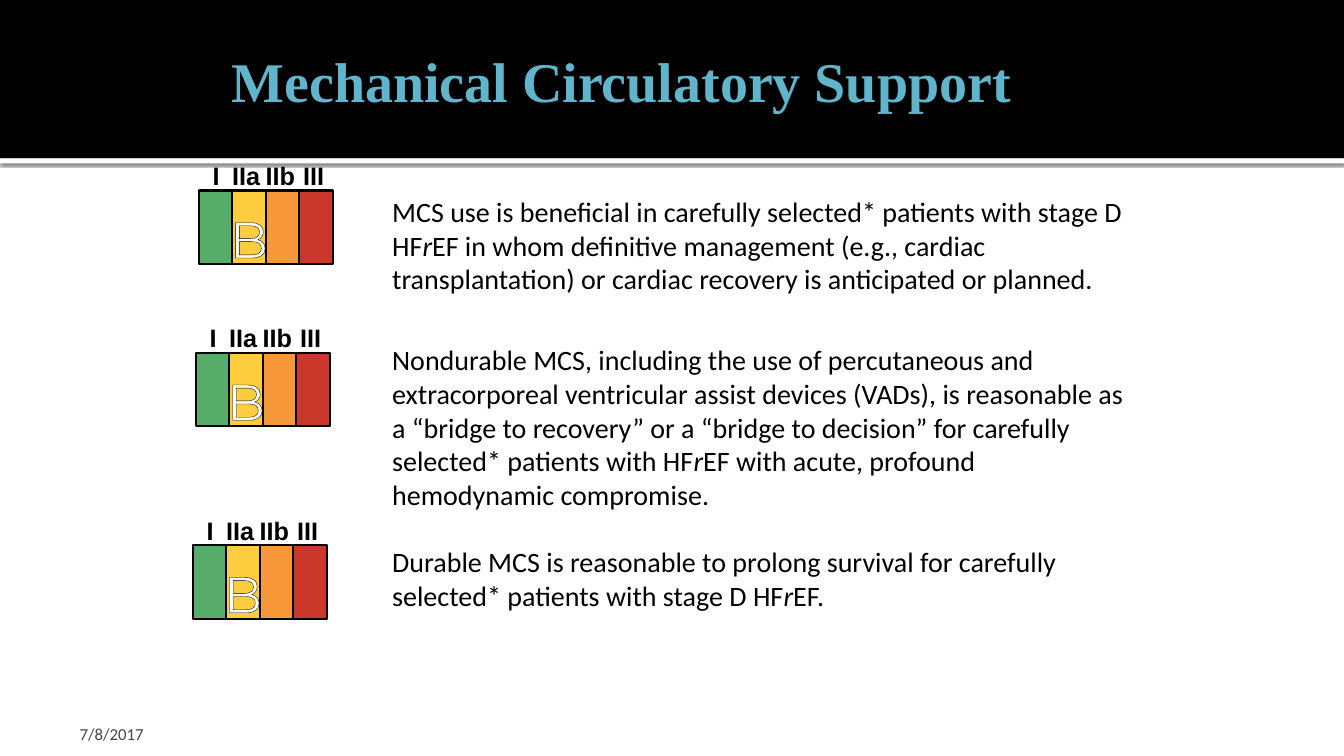
from dataclasses import dataclass

from lxml import etree
from pptx import Presentation
from pptx.dml.color import RGBColor
from pptx.enum.shapes import MSO_SHAPE
from pptx.enum.text import MSO_ANCHOR, PP_ALIGN
from pptx.oxml.ns import qn
from pptx.util import Inches, Pt

RECTANGLE = MSO_SHAPE.RECTANGLE
TOP, MIDDLE, BOTTOM = MSO_ANCHOR.TOP, MSO_ANCHOR.MIDDLE, MSO_ANCHOR.BOTTOM
LEFT, CENTER = PP_ALIGN.LEFT, PP_ALIGN.CENTER


@dataclass(frozen=True)
class Theme:
    """Colours, fonts and type sizes of the slide."""
    black: str = "000000"
    white: str = "FFFFFF"
    title: str = "60B5CC"
    date: str = "454545"
    title_font: str = "Times New Roman"
    body_font: str = "Calibri"
    label_font: str = "Arial"
    level_font: str = "Montserrat"
    title_size: int = 40
    body_size: int = 20
    date_size: int = 12
    label_size: int = 18
    level_size: int = 36


THEME = Theme()
CLASSES = [("I", "57AC69", 0.14), ("IIa", "FDCC3F", 0),
           ("IIb", "F7983A", 0), ("III", "C9382A", 0.04)]
BADGES = [(1.97, 1.59), (1.94, 3.2), (1.91, 5.11)]
RECOMMENDATIONS = [
    ("MCS use is beneficial in carefully selected* patients with stage D HF_r_EF in whom "
     "definitive management (e.g., cardiac transplantation) or cardiac recovery is "
     "anticipated or planned.", 0),
    ("Nondurable MCS, including the use of percutaneous and extracorporeal ventricular "
     "assist devices (VADs), is reasonable as a “bridge to recovery” or a “bridge to "
     "decision” for carefully selected* patients with HF_r_EF with acute, profound "
     "hemodynamic compromise.", 34),
    ("Durable MCS is reasonable to prolong survival for carefully selected* patients "
     "with stage D HF_r_EF.", 24),
]


def add_effects(properties, shadow):
    """Add a downward shadow to shape properties."""
    effects = etree.SubElement(properties, qn("a:effectLst"))
    outer = etree.SubElement(effects, qn("a:outerShdw"), blurRad=str(Pt(2.5)),
                             dist=str(Pt(0.8)), dir="5400000", rotWithShape="0")
    color = etree.SubElement(outer, qn("a:srgbClr"), val=shadow)
    etree.SubElement(color, qn("a:alpha"), val="60000")


def outline_text(run, color, width):
    """Draw a line around the letters of a run."""
    properties = run.font._element
    line = etree.Element(qn("a:ln"), w=str(Pt(width)))
    fill = etree.SubElement(line, qn("a:solidFill"))
    etree.SubElement(fill, qn("a:srgbClr"), val=color)
    properties.insert(0, line)


def add_rectangle(shapes, box, fill, line=None, shadow=None):
    """Add a filled rectangle in a box of inches."""
    shape = shapes.add_shape(RECTANGLE, *map(Inches, box))
    shape.fill.solid()
    shape.fill.fore_color.rgb = RGBColor.from_string(fill)
    if line:
        shape.line.color.rgb = RGBColor.from_string(line)
        shape.line.width = Pt(1.5)
    else:
        shape.line.fill.background()
    if shadow:
        add_effects(shape._element.spPr, shadow)
    else:
        shape.shadow.inherit = False


def add_text(shapes, text, box, *, font, size, color, bold=False, anchor=TOP, align=LEFT,
             insets=(0, 0, 0, 0), outline=None):
    """Add paragraphs as text or (text, space before) pairs; underscores enclose italics."""
    frame = shapes.add_textbox(*map(Inches, box)).text_frame
    frame.word_wrap = True
    frame.vertical_anchor = anchor
    (frame.margin_left, frame.margin_top,
     frame.margin_right, frame.margin_bottom) = map(Inches, insets)
    entries = [(text, 0)] if isinstance(text, str) else text
    for number, (content, space) in enumerate(entries):
        paragraph = frame.add_paragraph() if number else frame.paragraphs[0]
        paragraph.alignment = align
        paragraph.space_before = Pt(space)
        for index, part in enumerate(content.split("_")):
            run = paragraph.add_run()
            run.text = part
            run.font.name = font
            run.font.size = Pt(size)
            run.font.bold = bold
            run.font.italic = index % 2 == 1
            run.font.color.rgb = RGBColor.from_string(color)
            if outline:
                outline_text(run, outline, 0.75)


def add_header(slide, box):
    """Add the black band, its shadowed lower edge and the title."""
    left, top, width, height = box
    add_rectangle(slide.shapes, (left, top + height, width, 0.05), THEME.white,
                  shadow=THEME.black)
    add_rectangle(slide.shapes, box, THEME.black)
    add_text(slide.shapes, "Mechanical Circulatory Support",
             (left + 2.2, top + 0.25, 9, 1.08), font=THEME.title_font,
             size=THEME.title_size, color=THEME.title, bold=True, anchor=MIDDLE,
             insets=(0.1, 0.05, 0.05, 0.05))


def add_recommendations(slide, box):
    """Add the three recommendations as spaced paragraphs."""
    add_text(slide.shapes, RECOMMENDATIONS, box, font=THEME.body_font,
             size=THEME.body_size, color=THEME.black, insets=(0.06, 0.1, 0.1, 0.05))


def add_badge(slide, box):
    """Add a grouped class scale with its evidence level on the second class."""
    left, top, width, height = box
    label_height = 0.3
    level_width = 0.5
    step = width / len(CLASSES)
    shapes = slide.shapes.add_group_shape().shapes
    for index, (name, color, offset) in enumerate(CLASSES):
        cell_left = left + index * step
        add_rectangle(shapes, (cell_left, top + label_height, step, height - label_height),
                      color, line=THEME.black)
        add_text(shapes, name, (cell_left + offset, top, 0.4, label_height),
                 font=THEME.label_font, size=THEME.label_size, color=THEME.black, bold=True)
    add_text(shapes, "B", (left + 1.5 * step - level_width / 2, top + 0.47, level_width, 0.5),
             font=THEME.level_font, size=THEME.level_size, color=THEME.white,
             align=CENTER, outline=THEME.black)


def add_date(slide, box):
    """Add the date at the foot of the slide."""
    add_text(slide.shapes, "7/8/2017", box, font=THEME.body_font, size=THEME.date_size,
             color=THEME.date, anchor=BOTTOM, insets=(0.12, 0.05, 0.05, 0))


def main():
    """Build and save the presentation."""
    presentation = Presentation()
    presentation.slide_width = Inches(13.33)
    presentation.slide_height = Inches(7.5)
    slide = presentation.slides.add_slide(presentation.slide_layouts[6])
    add_header(slide, (0, 0, 13.33, 1.57))
    add_recommendations(slide, (3.83, 1.83, 7.5, 4.83))
    add_date(slide, (0.67, 7.08, 3.11, 0.3))
    for left, top in BADGES:
        add_badge(slide, (left, top, 1.33, 1.03))
    presentation.save("out.pptx")


if __name__ == "__main__":
    main()
